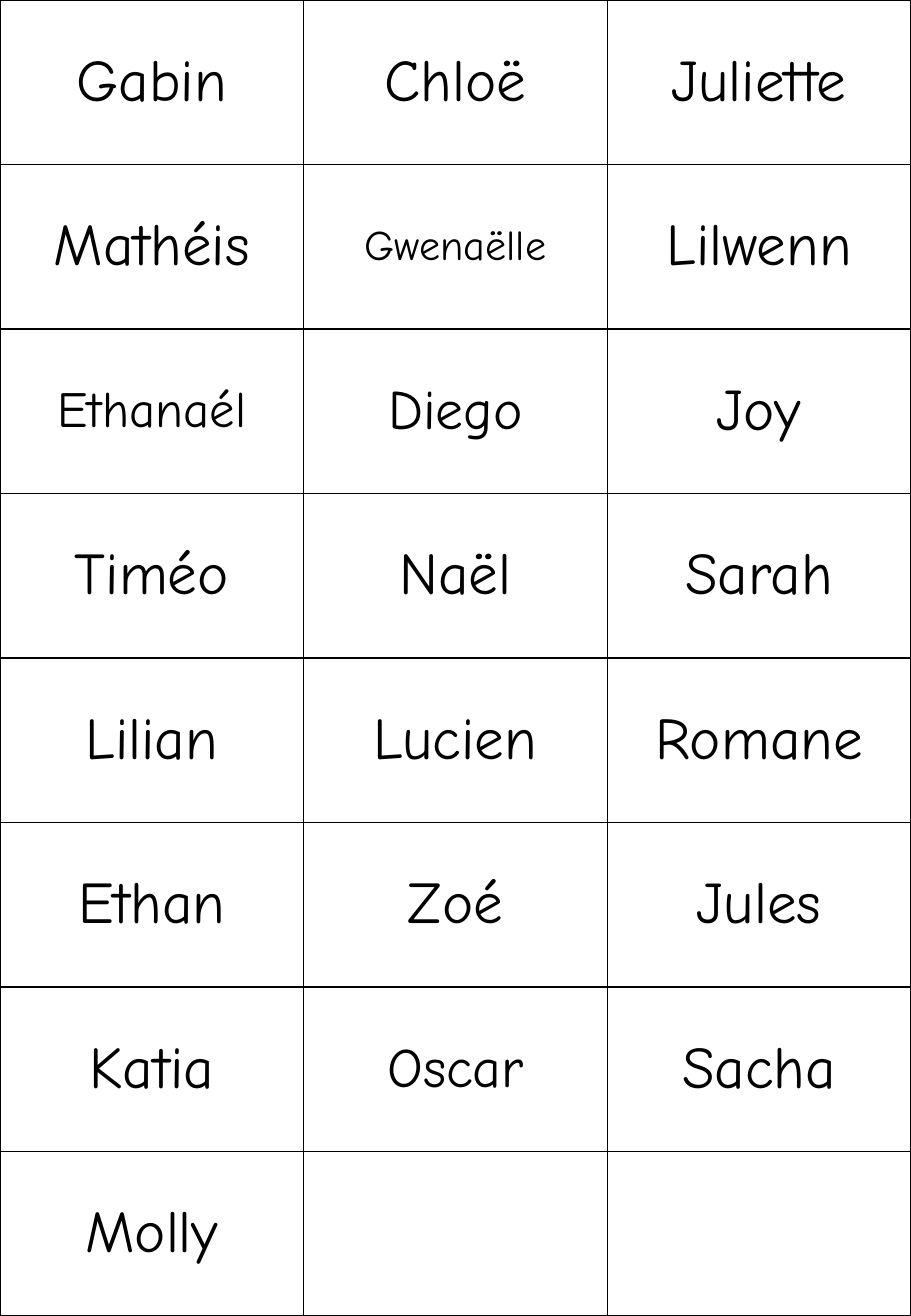
from lxml import etree
from pptx import Presentation
from pptx import util as u
from pptx.dml.color import RGBColor
from pptx.enum import text
from pptx.oxml import ns

PX = 9525  # EMU per px, 96 px to the inch
WIDTH, HEIGHT = 720, 1040
BLACK = RGBColor(0x00, 0x00, 0x00)
WHITE = RGBColor(0xFF, 0xFF, 0xFF)

NAMES = [
    ["Gabin", "Chloë", "Juliette"],
    ["Mathéis", "Gwenaëlle", "Lilwenn"],
    ["Ethanaél", "Diego", "Joy"],
    ["Timéo", "Naël", "Sarah"],
    ["Lilian", "Lucien", "Romane"],
    ["Ethan", "Zoé", "Jules"],
    ["Katia", "Oscar", "Sacha"],
    ["Molly", "", ""],
]
SMALLER_SIZES = {"Gwenaëlle": 25, "Ethanaél": 30, "Diego": 33, "Oscar": 33}


def px(n):
    return u.Emu(n * PX)


def write(tf, content, size=35, font="Comic Neue", color=BLACK,
          align=text.PP_ALIGN.CENTER):
    p = tf.paragraphs[0]
    p.alignment = align
    r = p.add_run()
    r.text = content
    r.font.size = u.Pt(size)
    r.font.name = font
    r.font.color.rgb = color


class NameCards:
    """Holds the card style and the current slide."""

    border_color = BLACK
    border_width = u.Pt(1)

    def __init__(self, prs):
        self.s = prs.slides.add_slide(prs.slide_layouts[6])
        fill = self.s.background.fill
        fill.solid()
        fill.fore_color.rgb = WHITE

    def border(self, cell):
        tc_pr = cell._tc.get_or_add_tcPr()
        for side in ("a:lnL", "a:lnR", "a:lnT", "a:lnB"):
            ln = etree.SubElement(tc_pr, ns.qn(side), w=str(self.border_width))
            fill = etree.SubElement(ln, ns.qn("a:solidFill"))
            etree.SubElement(fill, ns.qn("a:srgbClr"), val=str(self.border_color))

    def table(self, rows, x, y, w, h):
        """Adds an evenly divided table with one name in each cell."""
        n_rows, n_cols = len(rows), len(rows[0])
        table = self.s.shapes.add_table(
            n_rows, n_cols, px(x), px(y), px(w), px(h)).table
        table.first_row = table.horz_banding = False
        for col in table.columns:
            col.width = px(w // n_cols)
        for row in table.rows:
            row.height = px(h // n_rows)
        for i, names in enumerate(rows):
            for j, name in enumerate(names):
                cell = table.cell(i, j)
                self.border(cell)
                cell.fill.background()
                cell.vertical_anchor = text.MSO_ANCHOR.MIDDLE
                if name:
                    write(cell.text_frame, name, size=SMALLER_SIZES.get(name, 35))


def main():
    prs = Presentation()
    prs.slide_width, prs.slide_height = px(WIDTH), px(HEIGHT)
    NameCards(prs).table(NAMES, 0, 0, WIDTH, HEIGHT)
    prs.save("out.pptx")


if __name__ == "__main__":
    main()
